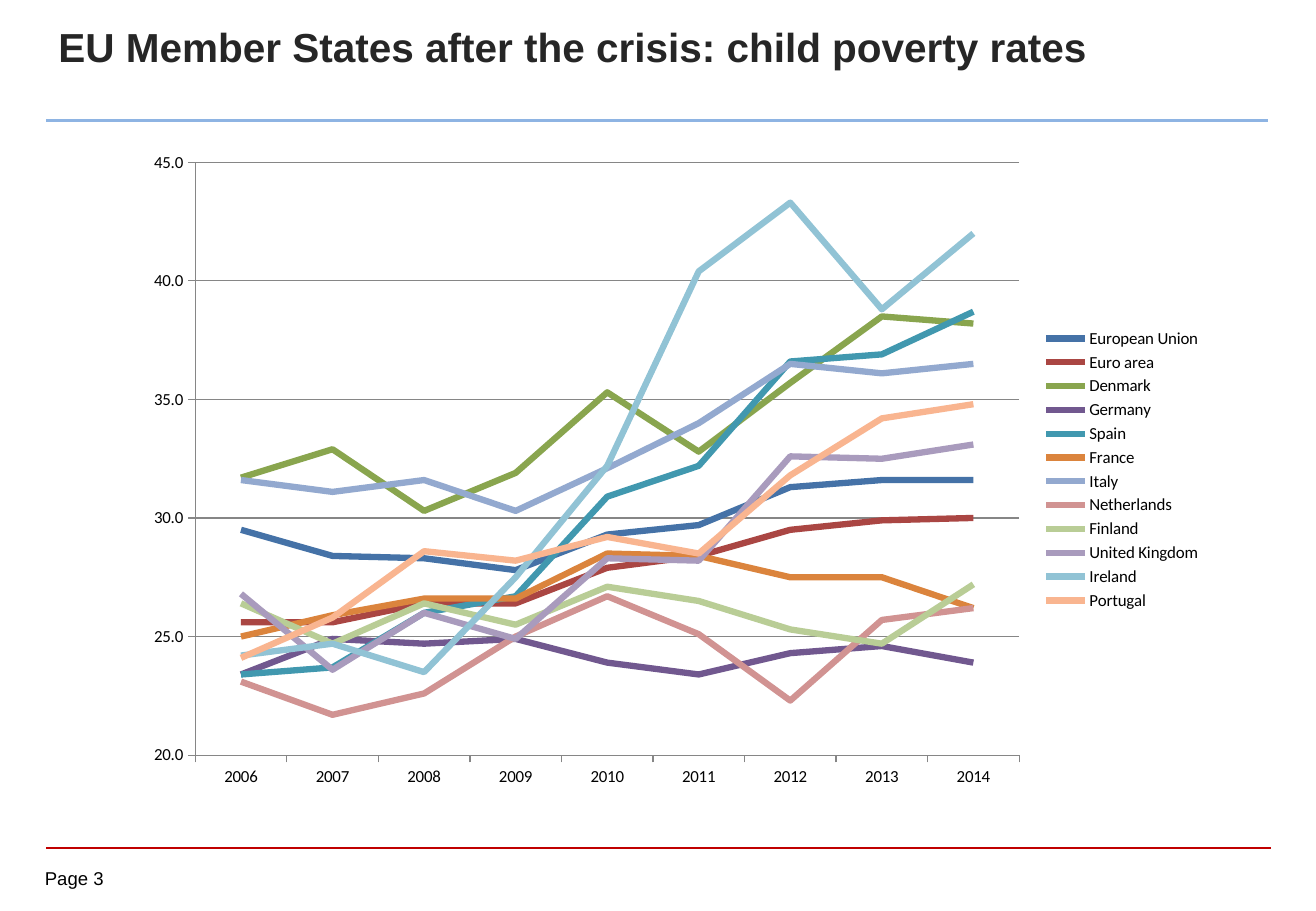
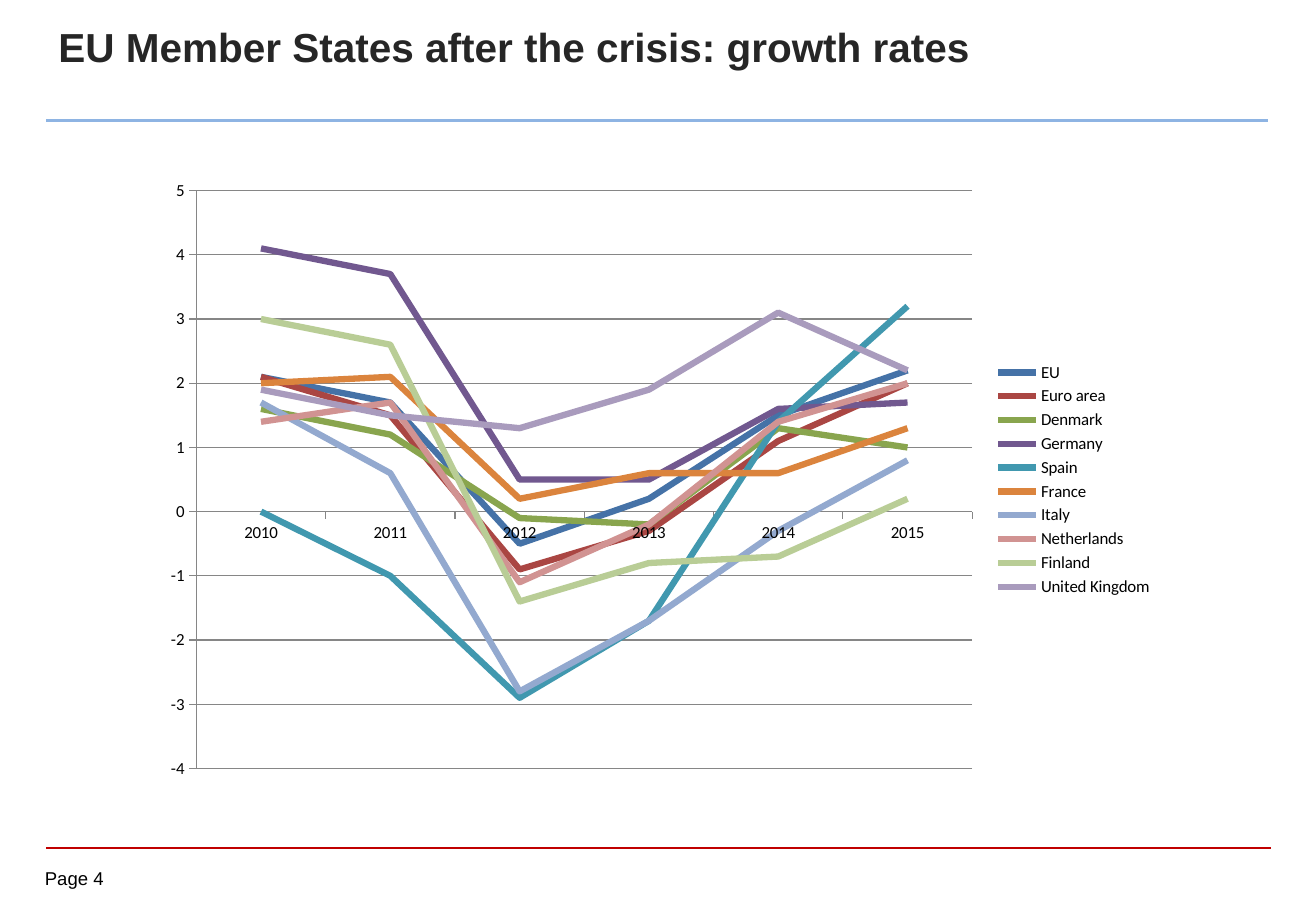
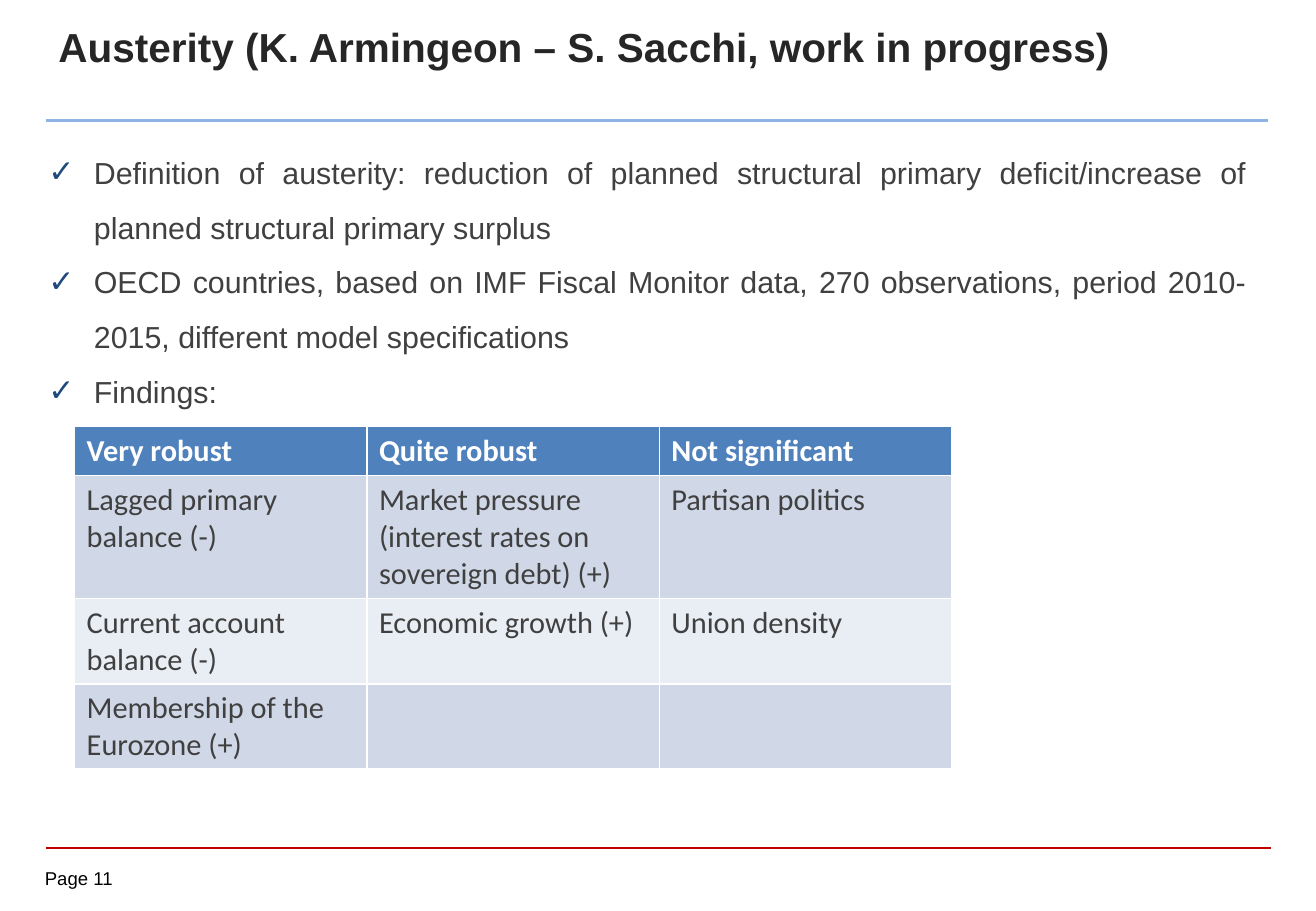
"""Build three slides on EU Member States after the crisis."""
from lxml import etree
from pptx import Presentation
from pptx import util as u
from pptx.chart import data as chart_data
from pptx.dml.color import RGBColor
from pptx.enum import chart as ch
from pptx.enum import shapes, text
from pptx.oxml import ns

Pt = u.Pt

CHILD_POVERTY = {
    "title": "EU Member States after the crisis: child poverty rates",
    "page": 3,
    "frame": (78.5, 82.8, 640.8, 391),
    "scale": (20, 45, 5),
    "format": "#,##0.0",
    "years": range(2006, 2015),
    "series": [
        ("European Union", (29.5, 28.4, 28.3, 27.8, 29.3, 29.7, 31.3, 31.6, 31.6)),
        ("Euro area", (25.6, 25.6, 26.4, 26.4, 27.9, 28.4, 29.5, 29.9, 30)),
        ("Denmark", (31.7, 32.9, 30.3, 31.9, 35.3, 32.8, 35.7, 38.5, 38.2)),
        ("Germany", (23.4, 24.9, 24.7, 24.9, 23.9, 23.4, 24.3, 24.6, 23.9)),
        ("Spain", (23.4, 23.7, 26, 26.7, 30.9, 32.2, 36.6, 36.9, 38.7)),
        ("France", (25, 25.9, 26.6, 26.6, 28.5, 28.4, 27.5, 27.5, 26.2)),
        ("Italy", (31.6, 31.1, 31.6, 30.3, 32.1, 34, 36.5, 36.1, 36.5)),
        ("Netherlands", (23.1, 21.7, 22.6, 25, 26.7, 25.1, 22.3, 25.7, 26.2)),
        ("Finland", (26.4, 24.7, 26.4, 25.5, 27.1, 26.5, 25.3, 24.7, 27.2)),
        ("United Kingdom", (26.8, 23.6, 26, 24.9, 28.3, 28.2, 32.6, 32.5, 33.1)),
        ("Ireland", (24.2, 24.7, 23.5, 27.5, 32.2, 40.4, 43.3, 38.8, 42)),
        ("Portugal", (24.1, 25.8, 28.6, 28.2, 29.2, 28.5, 31.8, 34.2, 34.8)),
    ],
}
GROWTH = {
    "title": "EU Member States after the crisis: growth rates",
    "page": 4,
    "frame": (89.3, 100, 601.2, 368.6),
    "scale": (-4, 5, 1),
    "format": "General",
    "years": range(2010, 2016),
    "series": [
        ("EU", (2.1, 1.7, -0.5, 0.2, 1.5, 2.2)),
        ("Euro area", (2.1, 1.5, -0.9, -0.3, 1.1, 2)),
        ("Denmark", (1.6, 1.2, -0.1, -0.2, 1.3, 1)),
        ("Germany", (4.1, 3.7, 0.5, 0.5, 1.6, 1.7)),
        ("Spain", (0, -1, -2.9, -1.7, 1.4, 3.2)),
        ("France", (2, 2.1, 0.2, 0.6, 0.6, 1.3)),
        ("Italy", (1.7, 0.6, -2.8, -1.7, -0.3, 0.8)),
        ("Netherlands", (1.4, 1.7, -1.1, -0.2, 1.4, 2)),
        ("Finland", (3, 2.6, -1.4, -0.8, -0.7, 0.2)),
        ("United Kingdom", (1.9, 1.5, 1.3, 1.9, 3.1, 2.2)),
    ],
}
AUSTERITY = {
    "title": "Austerity (K. Armingeon – S. Sacchi, work in progress)",
    "page": 11,
    "points": [
        "Definition of austerity: reduction of planned structural primary "
        "deficit/increase of planned structural primary surplus",
        "OECD countries, based on IMF Fiscal Monitor data, 270 observations, "
        "period 2010-2015, different model specifications",
        "Findings:",
    ],
    "findings": [
        ("Very robust", "Quite robust", "Not significant"),
        ("Lagged primary balance (-)",
         "Market pressure (interest rates on sovereign debt) (+)",
         "Partisan politics"),
        ("Current account balance (-)", "Economic growth (+)", "Union density"),
        ("Membership of the Eurozone (+)", "", ""),
    ],
}

SERIES_COLOURS = ["4572A7", "AA4643", "89A54E", "71588F", "4198AF", "DB843D",
                  "93A9CF", "D19392", "B9CD96", "A99BBD", "91C3D5", "F9B590"]
BLACK, WHITE, TITLE, BODY = "000000", "FFFFFF", "262626", "404040"
AXIS, TICK = "868686", "1F497D"
HEADER, BANDS = "4F81BD", ("D0D8E8", "E9EDF4")
RULES = [(71.3, 751.7, "8EB4E3", 1.5), (502.6, 753.1, "C00000", 1)]
LEFT = 27.4
ROW_HEIGHTS = (29.2, 73, 50, 50)
COLUMN_WIDTH = 173.3


def colour(value):
    return RGBColor.from_string(value)


def points(*lengths):
    return [Pt(length) for length in lengths]


def style(font, size, name, value, bold=False):
    font.size, font.name, font.bold = Pt(size), name, bold
    font.color.rgb = colour(value)


def draw_line(line, value, width):
    line.color.rgb = colour(value)
    line.width = Pt(width)


def add_box(slide, frame):
    box = slide.shapes.add_textbox(*points(*frame))
    box.text_frame.word_wrap = True
    return box.text_frame


def add_page(deck, content):
    slide = deck.slides.add_slide(deck.slide_layouts[5])
    for y, right, value, width in RULES:
        rule = slide.shapes.add_connector(
            shapes.MSO_CONNECTOR.STRAIGHT, *points(LEFT, y, right, y))
        draw_line(rule.line, value, width)
        etree.SubElement(rule._element.spPr, ns.qn("a:effectLst"))
    title = slide.shapes.title
    title.left, title.top, title.width, title.height = points(LEFT, 9.4, 640.8, 51)
    frame = title.text_frame
    frame.text = content["title"]
    frame.auto_size = text.MSO_AUTO_SIZE.NONE
    frame.vertical_anchor = text.MSO_ANCHOR.TOP
    frame.paragraphs[0].alignment = text.PP_ALIGN.LEFT
    style(frame.paragraphs[0].font, 24, "Arial", TITLE, True)
    footer = add_box(slide, (26.6, 514, 52.6, 15.8))
    footer.margin_left = footer.margin_right = 0
    footer.margin_top = footer.margin_bottom = 0
    footer.text = f"Page {content['page']}"
    style(footer.paragraphs[0].font, 11, "Arial", BLACK)
    return slide


def add_line_chart(slide, content):
    data = chart_data.CategoryChartData(number_format=content["format"])
    data.categories = [str(year) for year in content["years"]]
    for name, values in content["series"]:
        data.add_series(name, values)
    chart = slide.shapes.add_chart(
        ch.XL_CHART_TYPE.LINE, *points(*content["frame"]), data).chart
    chart.has_title = False
    style(chart.font, 10, "Calibri", BLACK)
    chart.has_legend = True
    chart.legend.position = ch.XL_LEGEND_POSITION.RIGHT
    chart.legend.include_in_layout = False
    chart.plots[0].vary_by_categories = False
    for series, value in zip(chart.plots[0].series, SERIES_COLOURS):
        series.smooth = False
        series.marker.style = ch.XL_MARKER_STYLE.NONE
        draw_line(series.format.line, value, 3.75)
    for axis in (chart.category_axis, chart.value_axis):
        axis.major_tick_mark = ch.XL_TICK_MARK.OUTSIDE
        axis.minor_tick_mark = ch.XL_TICK_MARK.NONE
        draw_line(axis.format.line, AXIS, 0.75)
    scale = chart.value_axis
    scale.minimum_scale, scale.maximum_scale, scale.major_unit = content["scale"]
    scale.has_major_gridlines = True
    draw_line(scale.major_gridlines.format.line, AXIS, 0.75)
    scale.tick_labels.number_format = content["format"]
    scale.tick_labels.number_format_is_linked = False


def add_tick(para):
    props = para._p.get_or_add_pPr()
    props.set("marL", str(Pt(27)))
    props.set("indent", str(-Pt(27)))
    tint = etree.SubElement(props, ns.qn("a:buClr"))
    etree.SubElement(tint, ns.qn("a:srgbClr"), val=TICK)
    etree.SubElement(props, ns.qn("a:buSzPct"), val="103000")
    etree.SubElement(props, ns.qn("a:buFont"), typeface="Arial")
    etree.SubElement(props, ns.qn("a:buChar"), char="✓")


def add_points(slide, items):
    frame = add_box(slide, (21.6, 77, 724.3, 280))
    frame.text = "\n".join(items)
    for para in frame.paragraphs:
        add_tick(para)
        para.alignment = text.PP_ALIGN.JUSTIFY
        para.line_spacing = 1.5
        style(para.font, 18, "Arial", BODY)


def add_findings(slide, rows):
    count = len(rows[0])
    table = slide.shapes.add_table(
        len(rows), count,
        *points(44.2, 252.7, count * COLUMN_WIDTH, sum(ROW_HEIGHTS))).table
    for column in table.columns:
        column.width = Pt(COLUMN_WIDTH)
    for r, row in enumerate(rows):
        table.rows[r].height = Pt(ROW_HEIGHTS[r])
        header = r == 0
        for c, words in enumerate(row):
            cell = table.cell(r, c)
            cell.text = words
            cell.fill.solid()
            cell.fill.fore_color.rgb = colour(HEADER if header else BANDS[(r - 1) % 2])
            style(cell.text_frame.paragraphs[0].font, 18, "Calibri",
                  WHITE if header else BODY, header)


def main():
    deck = Presentation()
    deck.slide_width, deck.slide_height = points(780, 540)
    for content in (CHILD_POVERTY, GROWTH):
        add_line_chart(add_page(deck, content), content)
    slide = add_page(deck, AUSTERITY)
    add_points(slide, AUSTERITY["points"])
    add_findings(slide, AUSTERITY["findings"])
    deck.save("out.pptx")


if __name__ == "__main__":
    main()
